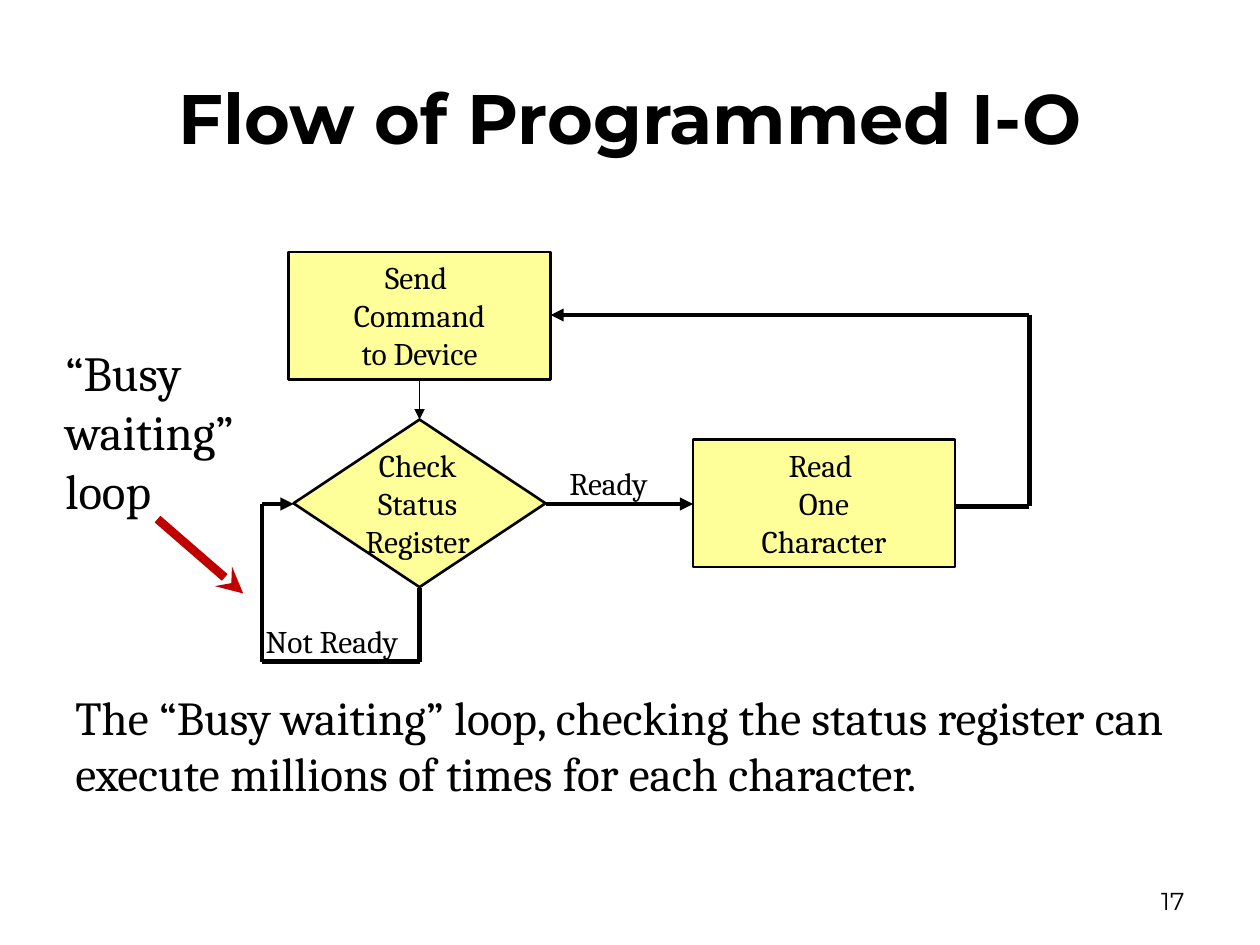
from lxml import etree
from pptx import Presentation
from pptx.dml.color import RGBColor
from pptx.enum.shapes import MSO_CONNECTOR, MSO_SHAPE
from pptx.enum.text import MSO_ANCHOR, PP_ALIGN
from pptx.oxml.ns import qn
from pptx.util import Inches, Pt

BLACK = RGBColor(0x00, 0x00, 0x00)
YELLOW = RGBColor(0xFF, 0xFF, 0x99)
RED = RGBColor(0xC0, 0x00, 0x00)


def write(box, text, size, align=PP_ALIGN.LEFT, anchor=MSO_ANCHOR.TOP, font="Cambria", bold=False):
    frame = box.text_frame
    frame.word_wrap = True
    frame.vertical_anchor = anchor
    paragraph = frame.paragraphs[0]
    paragraph.text = text
    paragraph.alignment = align
    for span in paragraph.runs:
        span.font.name = font
        span.font.size = Pt(size)
        span.font.bold = bold
        span.font.color.rgb = BLACK


def draw_line(start, end, width=2.5, color=BLACK, head=None):
    points = [Inches(value) for value in (*start, *end)]
    line = page.shapes.add_connector(MSO_CONNECTOR.STRAIGHT, *points)
    line.line.color.rgb = color
    line.line.width = Pt(width)
    if head:
        etree.SubElement(line.line._get_or_add_ln(), qn("a:tailEnd"), type=head)
    etree.SubElement(line._element.spPr, qn("a:effectLst"))


deck = Presentation()
deck.slide_width = Inches(10)
deck.slide_height = Inches(7.5)
page = deck.slides.add_slide(deck.slide_layouts[5])

title = page.shapes.title
title.left, title.top = Inches(0.5), Inches(0.3)
title.width, title.height = Inches(9), Inches(1.25)
write(title, "Flow of Programmed I-O", 40, PP_ALIGN.CENTER, MSO_ANCHOR.MIDDLE, "Montserrat", True)

steps = [
    (MSO_SHAPE.RECTANGLE, 2.29, 2, 2.08, 1.01, "Send \vCommand\vto Device"),
    (MSO_SHAPE.FLOWCHART_DECISION, 2.33, 3.33, 2, 1.33, ""),
    (MSO_SHAPE.RECTANGLE, 5.5, 3.49, 2.08, 1.01, "Read \vOne\vCharacter"),
]
for kind, left, top, width, height, text in steps:
    step = page.shapes.add_shape(kind, Inches(left), Inches(top), Inches(width), Inches(height))
    step.shadow.inherit = False
    step.fill.solid()
    step.fill.fore_color.rgb = YELLOW
    step.line.color.rgb = BLACK
    step.line.width = Pt(1.5)
    if text:
        write(step, text, 18, PP_ALIGN.CENTER)

draw_line((3.33, 3.01), (3.33, 3.33), width=0.75, head="triangle")
draw_line((4.33, 4), (5.5, 4), head="triangle")

wait_loop = [(3.33, 4.67), (3.33, 5.25), (2.08, 5.25), (2.08, 4), (2.33, 4)]
return_loop = [(7.58, 4.02), (8.17, 4.02), (8.17, 2.5), (4.37, 2.5)]
for route in (wait_loop, return_loop):
    for start, end in zip(route, route[1:]):
        draw_line(start, end, head="triangle" if end == route[-1] else None)

draw_line((1.25, 4.12), (1.93, 4.71), width=5, color=RED, head="stealth")

labels = [
    (2.4, 3.49, 1.83, 1.01, "Check\vStatus\vRegister", 18, PP_ALIGN.CENTER),
    (4.42, 3.63, 1.08, 0.4, "Ready", 18, PP_ALIGN.LEFT),
    (2.01, 4.89, 1.83, 0.4, "Not Ready", 18, PP_ALIGN.LEFT),
    (0.42, 2.67, 1.6, 1.51, "“Busy waiting” loop", 28, PP_ALIGN.LEFT),
    (0.5, 5.41, 9, 1.01, "The “Busy waiting” loop, checking the status register can "
     "execute millions of times for each character.", 27, PP_ALIGN.LEFT),
]
for left, top, width, height, text, size, align in labels:
    label = page.shapes.add_textbox(Inches(left), Inches(top), Inches(width), Inches(height))
    write(label, text, size, align)

page_number = page.shapes.add_textbox(Inches(7.17), Inches(6.95), Inches(2.33), Inches(0.4))
write(page_number, "17", 14, PP_ALIGN.RIGHT, MSO_ANCHOR.MIDDLE, "Montserrat")

deck.save("out.pptx")
